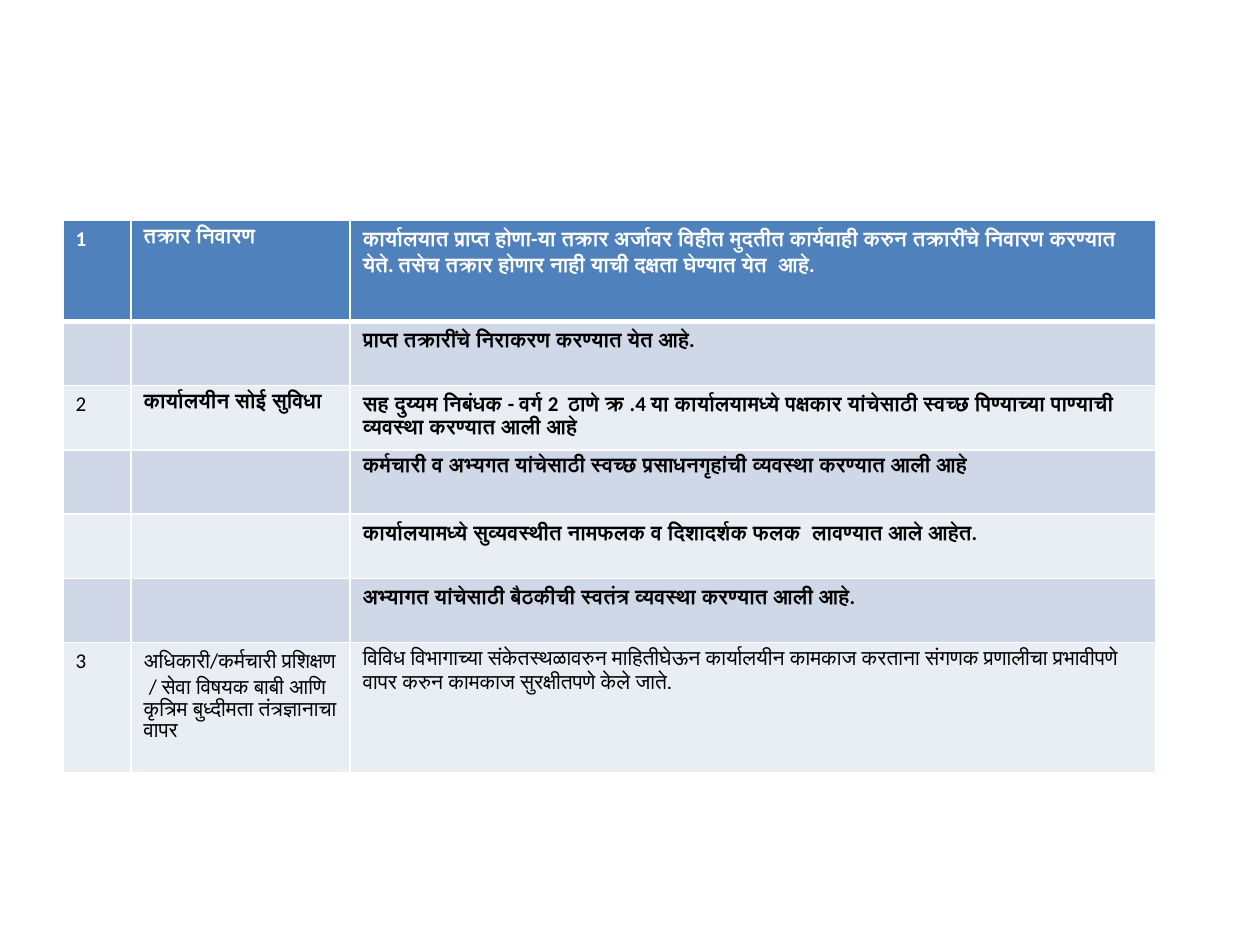
from lxml.etree import SubElement as Sub
from pptx import Presentation
from pptx.dml.color import RGBColor as RGB
from pptx.oxml.ns import qn
from pptx.util import Inches, Pt

WHITE, BLACK, HEAD = "FFFFFF", "000000", "4F81BD"
BANDS = ["E9EDF4", "D0D8E8"]
COLS = [0.54, 1.74, 6.39]
ROWS = [0.8] + [0.51] * 5 + [1.03]
BOX = (0.5, 1.75, sum(COLS), sum(ROWS))

# Number, topic, detail
DATA = [
    ("1", "तक्रार निवारण",
     "कार्यालयात प्राप्त होणा-या तक्रार अर्जावर विहीत मुदतीत कार्यवाही करुन "
     "तक्रारींचे निवारण करण्यात येते. तसेच तक्रार होणार नाही याची दक्षता "
     "घेण्यात येत  आहे."),
    ("", "", "प्राप्त तक्रारींचे निराकरण करण्यात येत आहे."),
    ("2", "कार्यालयीन सोई सुविधा",
     "सह दुय्यम निबंधक - वर्ग 2  ठाणे क्र .4 या कार्यालयामध्ये पक्षकार "
     "यांचेसाठी स्वच्छ पिण्याच्या पाण्याची व्यवस्था करण्यात आली आहे"),
    ("", "", "कर्मचारी व अभ्यगत यांचेसाठी स्वच्छ प्रसाधनगृहांची व्यवस्था "
     "करण्यात आली आहे"),
    ("", "", "कार्यालयामध्ये सुव्यवस्थीत नामफलक व दिशादर्शक फलक  लावण्यात "
     "आले आहेत."),
    ("", "", "अभ्यागत यांचेसाठी बैठकीची स्वतंत्र व्यवस्था करण्यात आली आहे."),
    ("3", "अधिकारी/कर्मचारी प्रशिक्षण  / सेवा विषयक बाबी आणि कृत्रिम "
     "बुध्दीमता तंत्रज्ञानाचा वापर",
     "विविध विभागाच्या संकेतस्थळावरुन माहितीघेऊन कार्यालयीन कामकाज करताना "
     "संगणक प्रणालीचा प्रभावीपणे वापर करुन कामकाज सुरक्षीतपणे केले जाते."),
]


def paint(fill, tone):
    fill.solid()
    fill.fore_color.rgb = RGB.from_string(tone)


def edge(cell, **widths):
    """Draw white borders; the sides come in the order L, R, T, B."""
    props = cell._tc.get_or_add_tcPr()
    for side, width in widths.items():
        line = Sub(props, qn(f"a:ln{side}"), w=str(Pt(width)))
        Sub(Sub(line, qn("a:solidFill")), qn("a:srgbClr"), val=WHITE)


def write(cell, text, tone, bold):
    run = cell.text_frame.paragraphs[0].add_run()
    run.text = text
    style = {"name": "Calibri", "size": Pt(12), "bold": bold}
    for key, val in style.items():
        setattr(run.font, key, val)
    paint(run.font.fill, tone)


def grid(slide, box):
    """Place the table in the box, with its rows and columns in proportion."""
    left, top, width, height = box
    table = slide.shapes.add_table(
        len(ROWS), len(COLS), *map(Inches, box)).table
    for col, share in zip(table.columns, COLS):
        col.width = Inches(width * share / sum(COLS))
    for row, share in zip(table.rows, ROWS):
        row.height = Inches(height * share / sum(ROWS))

    last = len(DATA) - 1
    for r, texts in enumerate(DATA):
        for c, text in enumerate(texts):
            cell = table.cell(r, c)
            # The heading row is parted from the rest by a thick line
            edge(cell, L=1, R=1, T=3 if r == 1 else 1, B=1 if r else 3)
            paint(cell.fill, BANDS[r % 2] if r else HEAD)
            if text:
                bold = r == 0 or (c > 0 and r < last)
                write(cell, text, BLACK if r else WHITE, bold)


def main():
    deck = Presentation()
    deck.slide_width, deck.slide_height = Inches(10), Inches(7.5)
    slide = deck.slides.add_slide(deck.slide_layouts[6])
    paint(slide.background.fill, WHITE)
    grid(slide, BOX)
    deck.save("out.pptx")


if __name__ == "__main__":
    main()
